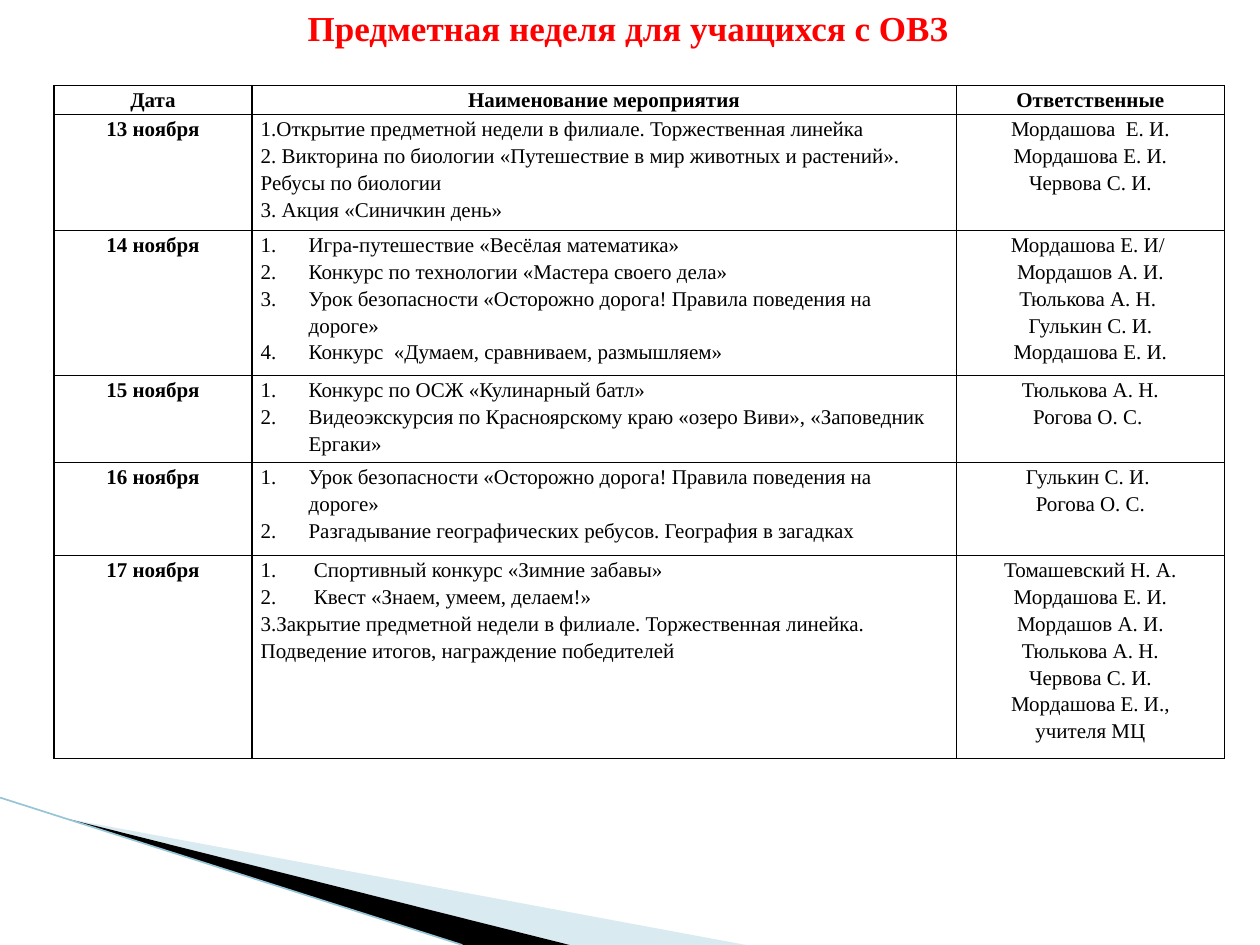
import lxml.etree
import pptx
import pptx.dml.color
import pptx.enum.shapes
import pptx.enum.text
import pptx.oxml
import pptx.oxml.ns
import pptx.util

Inches = pptx.util.Inches
Pt = pptx.util.Pt
RGBColor = pptx.dml.color.RGBColor
ALIGN = pptx.enum.text.PP_ALIGN
ANCHOR = pptx.enum.text.MSO_ANCHOR
qn = pptx.oxml.ns.qn

BLACK = RGBColor(0x00, 0x00, 0x00)
RED = RGBColor(0xFF, 0x00, 0x00)
PALE_BLUE = RGBColor(0xA0, 0xCB, 0xDC)
LINE_BLUE = RGBColor(0x97, 0xC5, 0xD8)
FONT = "Times New Roman"

HEADINGS = ["Дата", "Наименование мероприятия", "Ответственные"]
COLUMN_WIDTHS = [1.57, 5.59, 2.13]
ROW_HEIGHTS = [0.23, 0.92, 1.15, 0.69, 0.74, 1.61]
# Each day: date, number of auto-numbered events, events, people
DAYS = [
    ("13 ноября", 0, [
        "1.Открытие предметной недели в филиале. Торжественная линейка",
        "2. Викторина по биологии «Путешествие в мир животных и растений».  Ребусы по биологии",
        "3. Акция «Синичкин день»",
    ], ["Мордашова  Е. И.", "Мордашова Е. И.", "Червова С. И."]),
    ("14 ноября", 4, [
        "Игра-путешествие «Весёлая математика»",
        "Конкурс по технологии «Мастера своего дела»",
        "Урок безопасности «Осторожно дорога! Правила поведения на дороге»",
        "Конкурс  «Думаем, сравниваем, размышляем»",
    ], ["Мордашова Е. И/ ", "Мордашов А. И.", "Тюлькова А. Н. ", "Гулькин С. И.",
        "Мордашова Е. И."]),
    ("15 ноября", 2, [
        "Конкурс по ОСЖ «Кулинарный батл»",
        "Видеоэкскурсия по Красноярскому краю «озеро Виви», «Заповедник Ергаки»",
    ], ["Тюлькова А. Н.", "Рогова О. С. "]),
    ("16 ноября", 2, [
        "Урок безопасности «Осторожно дорога! Правила поведения на дороге»",
        "Разгадывание географических ребусов. География в загадках",
    ], ["Гулькин С. И. ", "Рогова О. С."]),
    ("17 ноября", 2, [
        " Спортивный конкурс «Зимние забавы»",
        " Квест «Знаем, умеем, делаем!»",
        "3.Закрытие предметной недели в филиале. Торжественная линейка. "
        "Подведение итогов, награждение победителей",
    ], ["Томашевский Н. А.", "Мордашова Е. И.", "Мордашов А. И.", "Тюлькова А. Н.",
        "Червова С. И.", "Мордашова Е. И.,", "учителя МЦ"]),
]


def set_attributes(target, values):
    for name, value in values.items():
        setattr(target, name, value)


def add_span(para, text, size, bold, color):
    span = para.add_run()
    span.text = text
    set_attributes(span.font, {"name": FONT, "size": Pt(size), "bold": bold})
    span.font.color.rgb = color


def number_paragraph(para):
    properties = para._p.get_or_add_pPr()
    properties.set("marL", str(Inches(0.38)))
    properties.set("indent", str(-Inches(0.38)))
    bullet = lxml.etree.SubElement(properties, qn("a:buAutoNum"))
    bullet.set("type", "arabicPeriod")


def set_borders(cell):
    properties = cell._tc.get_or_add_tcPr()
    for position, side in enumerate(("lnL", "lnR", "lnT", "lnB")):
        border = pptx.oxml.parse_xml(
            f'<a:{side} xmlns:a="http://schemas.openxmlformats.org/drawingml/2006/main" '
            f'w="{Pt(1)}"><a:solidFill><a:srgbClr val="{BLACK}"/></a:solidFill></a:{side}>')
        properties.insert(position, border)


def fill_cell(cell, lines, align, bold=False, numbered=0):
    side = Inches(0.07)
    set_attributes(cell, {"margin_left": side, "margin_right": side, "margin_top": 0,
                          "margin_bottom": 0, "vertical_anchor": ANCHOR.TOP})
    cell.fill.background()
    set_borders(cell)
    frame = cell.text_frame
    for index, line in enumerate(lines):
        para = frame.add_paragraph() if index else frame.paragraphs[0]
        set_attributes(para, {"alignment": align, "line_spacing": 1.15})
        if index < numbered:
            number_paragraph(para)
        add_span(para, line, 12, bold, BLACK)


def add_wedge(page, points, color, opacity=100):
    corners = [(Inches(x), Inches(y)) for x, y in points]
    builder = page.shapes.build_freeform(*corners[0], scale=1.0)
    builder.add_line_segments(corners[1:], close=True)
    wedge = builder.convert_to_shape()
    wedge.shadow.inherit = False
    wedge.fill.solid()
    wedge.fill.fore_color.rgb = color
    wedge.line.fill.background()
    if opacity < 100:
        tone = wedge._element.spPr.find(".//" + qn("a:srgbClr"))
        lxml.etree.SubElement(tone, qn("a:alpha")).set("val", str(opacity * 1000))


def add_corner(page, left, top, right, bottom):
    # Pale and black wedges fan out from one tip
    tip_x, tip_y = left + 0.54, top + 0.17
    add_wedge(page, [(tip_x, tip_y), (right, bottom), (right - 1.4, bottom)], PALE_BLUE, 40)
    add_wedge(page, [(tip_x, tip_y), (right - 1.4, bottom), (right - 2.25, bottom)], BLACK)
    # Thin edge line
    edge = page.shapes.add_connector(
        pptx.enum.shapes.MSO_CONNECTOR.STRAIGHT,
        Inches(left), Inches(top), Inches(right - 2.25), Inches(bottom))
    edge.line.color.rgb = LINE_BLUE
    edge.line.width = Pt(0.95)
    lxml.etree.SubElement(edge._element.spPr, qn("a:effectLst"))


def add_title(page, left, top, width, height):
    box = page.shapes.add_textbox(Inches(left), Inches(top), Inches(width), Inches(height))
    frame = box.text_frame
    set_attributes(frame, {"word_wrap": False, "vertical_anchor": ANCHOR.MIDDLE,
                           "auto_size": pptx.enum.text.MSO_AUTO_SIZE.SHAPE_TO_FIT_TEXT})
    para = frame.paragraphs[0]
    para.alignment = ALIGN.CENTER
    add_span(para, "Предметная неделя для учащихся с ОВЗ", 20, True, RED)


def add_schedule(page, left, top, width, height):
    table = page.shapes.add_table(
        len(ROW_HEIGHTS), len(COLUMN_WIDTHS),
        Inches(left), Inches(top), Inches(width), Inches(height)).table
    set_attributes(table, {"first_row": False, "horz_banding": False})
    for column, size in zip(table.columns, COLUMN_WIDTHS):
        column.width = Inches(size)
    for row, size in zip(table.rows, ROW_HEIGHTS):
        row.height = Inches(size)
    for index, heading in enumerate(HEADINGS):
        fill_cell(table.cell(0, index), [heading], ALIGN.CENTER, bold=True)
    for row, (date, numbered, events, people) in enumerate(DAYS, start=1):
        fill_cell(table.cell(row, 0), [date], ALIGN.CENTER, bold=True)
        fill_cell(table.cell(row, 1), events, ALIGN.LEFT, numbered=numbered)
        fill_cell(table.cell(row, 2), people, ALIGN.CENTER)


def main():
    deck = pptx.Presentation()
    set_attributes(deck, {"slide_width": Inches(10), "slide_height": Inches(7.5)})
    page = deck.slides.add_slide(deck.slide_layouts[6])
    add_corner(page, 0, 6.33, 5.92, 7.5)
    add_title(page, 2.32, 0, 5.33, 0.44)
    add_schedule(page, 0.43, 0.68, 9.29, 5.34)
    deck.save("out.pptx")


if __name__ == "__main__":
    main()
